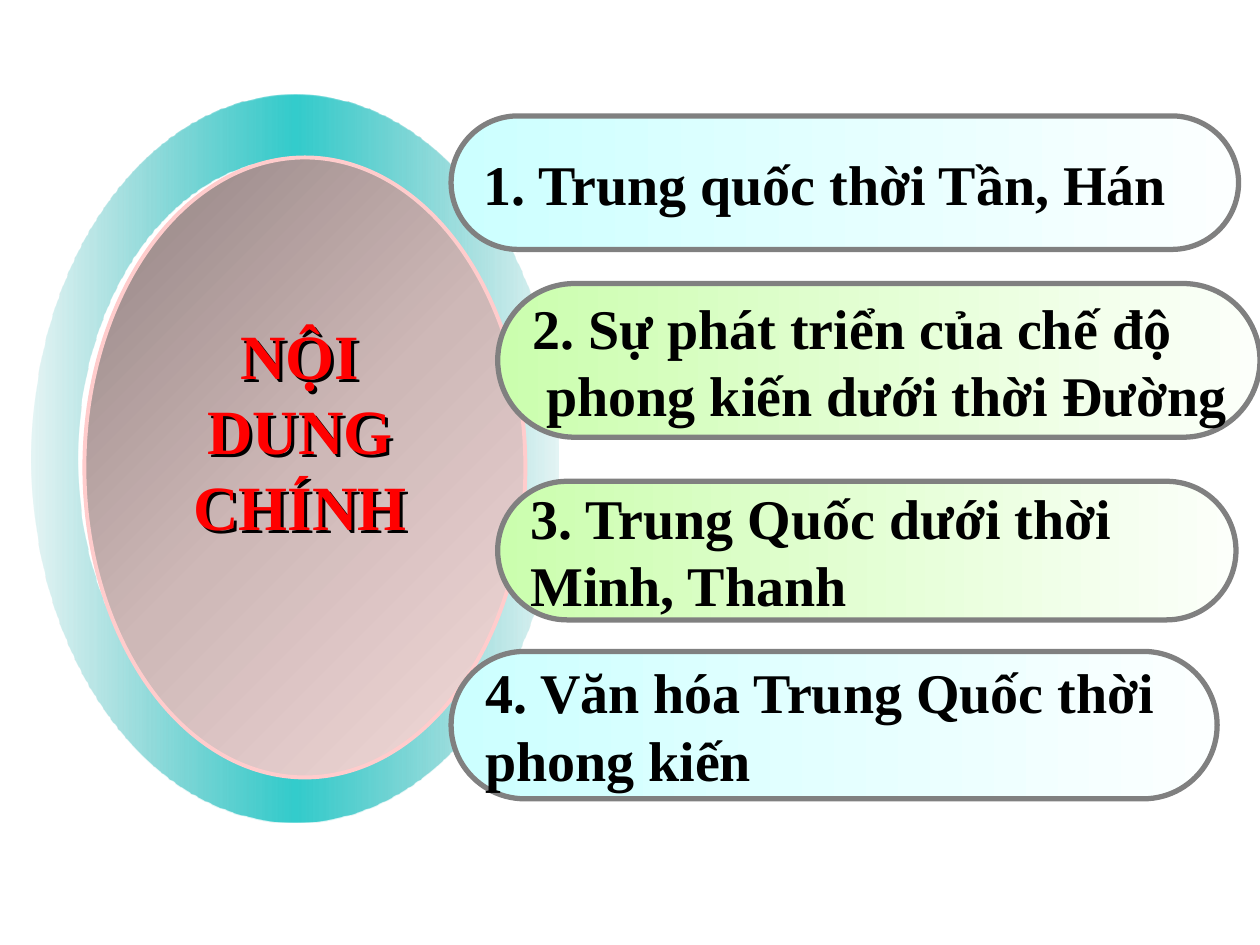
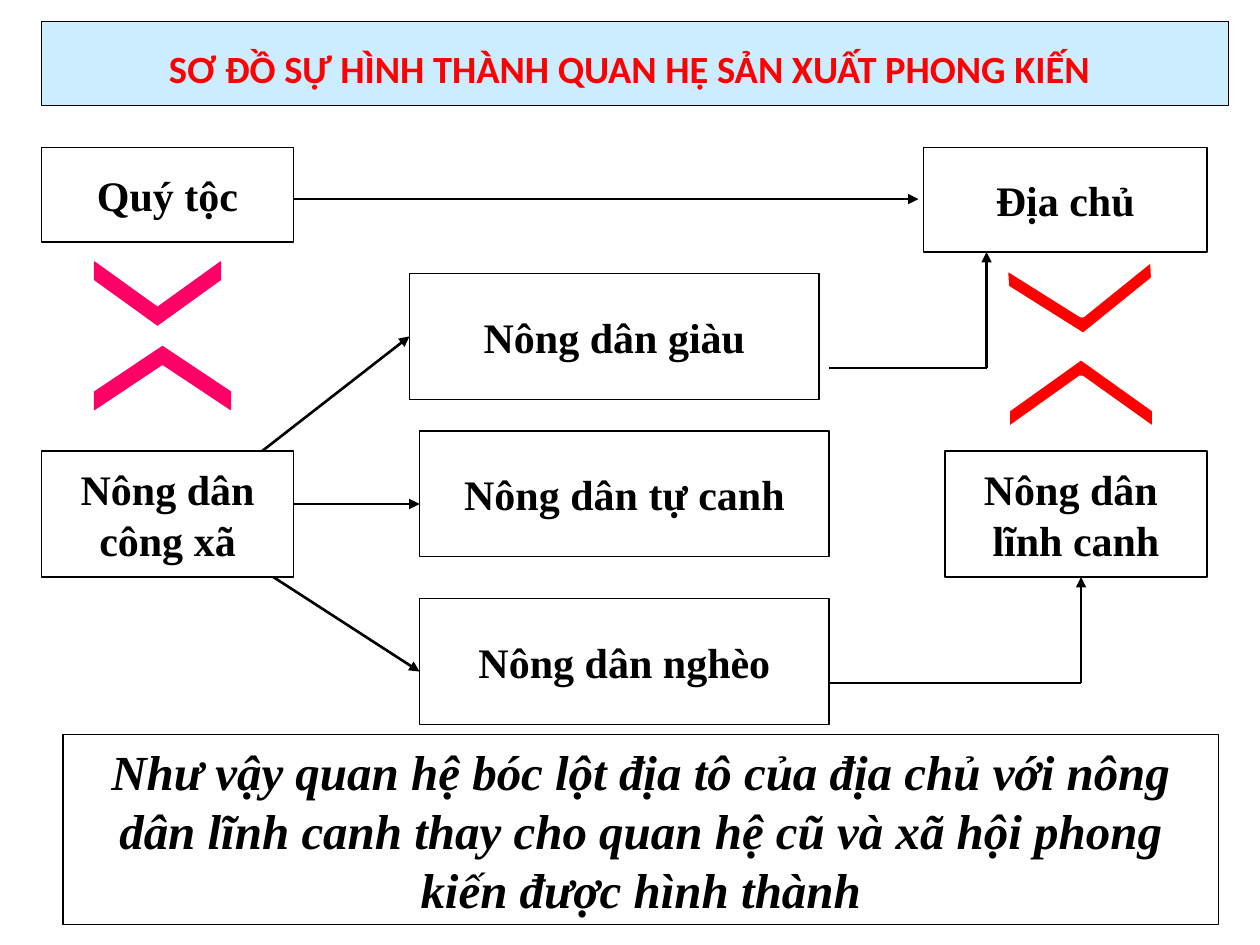
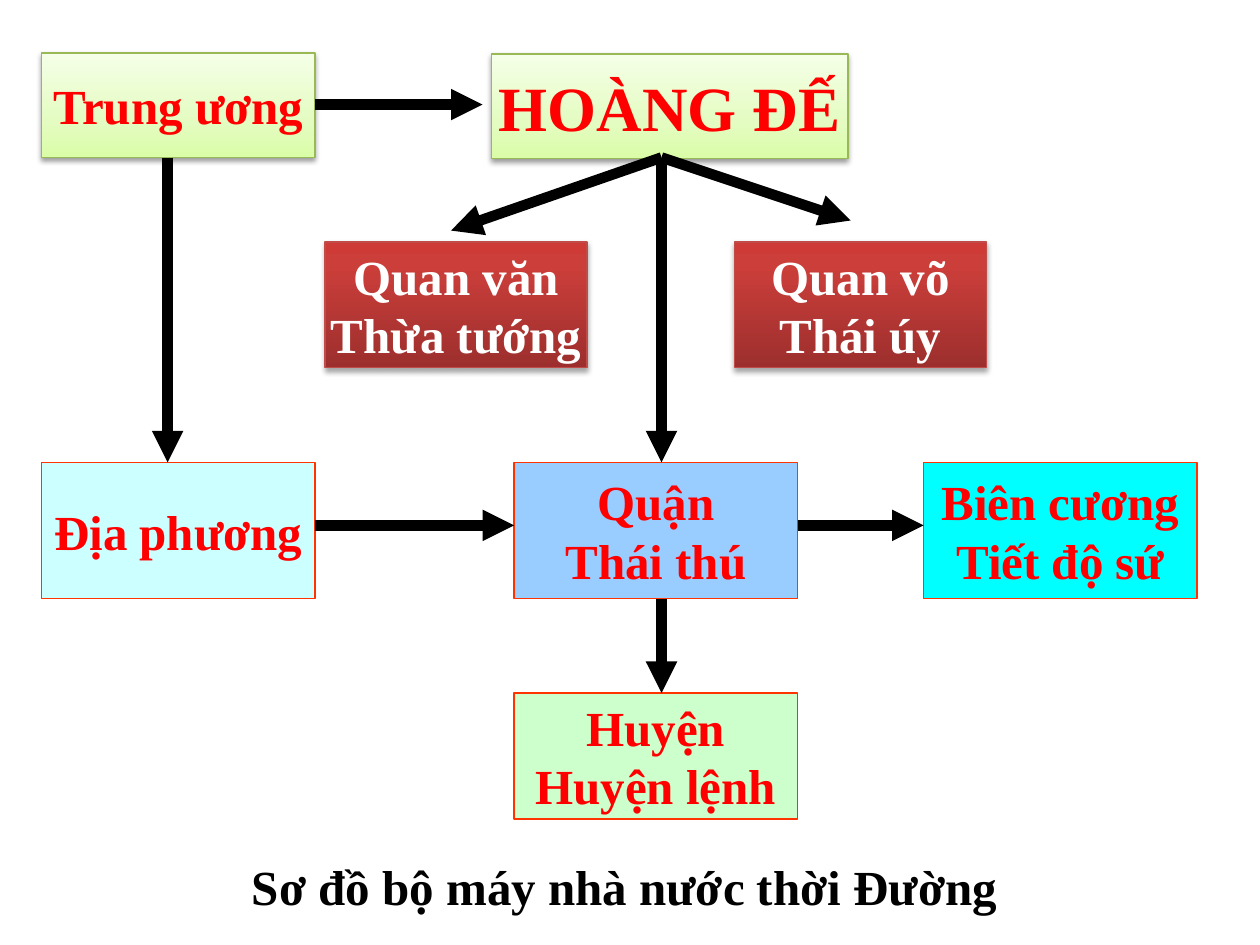
from itertools import pairwise

from pptx import Presentation
from pptx.dml.color import RGBColor
from pptx.enum.shapes import MSO_CONNECTOR, MSO_SHAPE
from pptx.enum.text import MSO_ANCHOR, MSO_AUTO_SIZE, PP_ALIGN
from pptx.oxml import parse_xml
from pptx.oxml.ns import nsdecls, qn
from pptx.util import Inches, Pt

RECT, ROUND_RECT = MSO_SHAPE.RECTANGLE, MSO_SHAPE.ROUNDED_RECTANGLE
ELLIPSE, CHEVRON = MSO_SHAPE.OVAL, MSO_SHAPE.CHEVRON
STRAIGHT = MSO_CONNECTOR.STRAIGHT
LEFT, CENTER = PP_ALIGN.LEFT, PP_ALIGN.CENTER
TOP, MIDDLE = MSO_ANCHOR.TOP, MSO_ANCHOR.MIDDLE
TITLE_ONLY = 5

COLORS = {
    "black": "000000", "white": "FFFFFF", "red": "FF0000", "pink": "FF0066",
    "blue": "3333FF", "gray": "808080", "rose": "FFCCCC", "heading": "CCECFF",
    "orange": "FF3300", "lime_edge": "98B955", "brick_edge": "BF4C48",
    "pale_cyan": "CCFFFF", "sky": "99CCFF", "cyan": "00FFFF", "mint": "CCFFCC",
}
# Gradients: direction, then stops of position, colour and opacity in percent
RIGHTWARD = '<a:lin ang="0" scaled="1"/>'
UPWARD = '<a:lin ang="16200000" scaled="0"/>'
FROM_CORNER = '<a:path path="circle"><a:fillToRect r="100000" b="100000"/></a:path>'
GRADIENTS = {
    "ring": (RIGHTWARD, [(0, "2BABAB", 12), (50, "33CCCC", 100), (100, "2BABAB", 12)]),
    "disc": (FROM_CORNER, [(0, "918181", 100), (50, "CEB8B7", 100), (100, "F4DADA", 100)]),
    "ice": (RIGHTWARD, [(0, "CCFFFF", 100), (100, "FCFFFF", 100)]),
    "leaf": (RIGHTWARD, [(0, "CBFEAE", 100), (100, "FCFFFA", 100)]),
    "lime": (UPWARD, [(0, "DAFDA7", 100), (35, "E4FCC2", 100), (100, "F5FFE7", 100)]),
    "brick": (UPWARD, [(0, "9C2F2D", 100), (80, "CB3E3A", 100), (100, "CE3B37", 100)]),
}
# Shadows: blur and distance in points, angle, opacity in percent
SHADOWS = {
    "lime": (3.1, 1.6, 90, 38),
    "brick": (3.1, 1.8, 90, 35),
    "letters": (0, 2.4, 45, 100),
}


def write(shape, text, size=24, color="black", font="Times New Roman",
          italic=False, align=CENTER, anchor=MIDDLE, wrap=False):
    frame = shape.text_frame
    frame.text = text
    frame.word_wrap = wrap
    frame.auto_size = MSO_AUTO_SIZE.NONE
    frame.vertical_anchor = anchor
    for paragraph in frame.paragraphs:
        paragraph.alignment = align
        for run in paragraph.runs:
            run.font.name = font
            run.font.size = Pt(size)
            run.font.bold = True
            run.font.italic = italic
            run.font.color.rgb = RGBColor.from_string(COLORS[color])


def paint(shape, fill=None, line=None, width=0.75, shadow=None):
    shape.shadow.inherit = False
    shape.fill.background()
    properties = shape.element.spPr
    if fill in GRADIENTS:
        direction, stops = GRADIENTS[fill]
        stop_xml = ""
        for position, color, opacity in stops:
            alpha = f'<a:alpha val="{opacity * 1000}"/>' if opacity < 100 else ""
            stop_xml += (f'<a:gs pos="{position * 1000}">'
                         f'<a:srgbClr val="{color}">{alpha}</a:srgbClr></a:gs>')
        gradient = parse_xml(
            f'<a:gradFill {nsdecls("a")} rotWithShape="1">'
            f'<a:gsLst>{stop_xml}</a:gsLst>{direction}</a:gradFill>')
        properties.replace(properties.find(qn("a:noFill")), gradient)
    elif fill:
        shape.fill.solid()
        shape.fill.fore_color.rgb = RGBColor.from_string(COLORS[fill])
    if line:
        shape.line.color.rgb = RGBColor.from_string(COLORS[line])
        shape.line.width = Pt(width)
    else:
        shape.line.fill.background()
    if shadow:
        blur, distance, angle, opacity = SHADOWS[shadow]
        properties.find(qn("a:effectLst")).append(parse_xml(
            f'<a:outerShdw {nsdecls("a")} blurRad="{Pt(blur)}" dist="{Pt(distance)}" '
            f'dir="{angle * 60000}" rotWithShape="0"><a:srgbClr val="000000">'
            f'<a:alpha val="{opacity * 1000}"/></a:srgbClr></a:outerShdw>'))


prs = Presentation()
prs.slide_width, prs.slide_height = Inches(10), Inches(7.5)
contents, relations, government = [
    prs.slides.add_slide(prs.slide_layouts[TITLE_ONLY]) for _ in range(3)]

# Titles
for slide, (left, top, width, height) in (
        (contents, (1.09, 2.46, 2.58, 2.46)),
        (relations, (0.33, 0.17, 9.42, 0.67)),
        (government, (0.33, 6.75, 9.25, 0.57))):
    title = slide.shapes.title
    title.left, title.top = Inches(left), Inches(top)
    title.width, title.height = Inches(width), Inches(height)

# Slide 1: ring of two ellipses, each made of four Bezier quarters
ring_left, ring_top, radius_x, radius_y = 0.25, 0.75, 2.09, 2.89
BEZIER = 0.5523
clockwise = [(-1, 0), (0, -1), (1, 0), (0, 1), (-1, 0)]
builder = contents.shapes.build_freeform(Inches(ring_left), Inches(ring_top + radius_y))
quarters = []
for rx, ry, corners in ((radius_x, radius_y, clockwise),
                        (1.72, 2.38, clockwise[::-1])):
    points = [(Inches(ring_left + radius_x + rx * x), Inches(ring_top + radius_y + ry * y))
              for x, y in corners]
    if rx != radius_x:
        builder.move_to(*points[0])
    builder.add_line_segments(points[1:], close=True)
    for (x1, y1), (x2, y2) in pairwise(corners):
        controls = ((x1 + BEZIER * x2, y1 + BEZIER * y2),
                    (x2 + BEZIER * x1, y2 + BEZIER * y1), (x2, y2))
        quarters.append("".join(
            f'<a:pt x="{Inches(radius_x + rx * x)}" y="{Inches(radius_y + ry * y)}"/>'
            for x, y in controls))
ring = builder.convert_to_shape()
for segment, quarter in zip(list(ring.element.iter(qn("a:lnTo"))), quarters):
    segment.getparent().replace(segment, parse_xml(
        f'<a:cubicBezTo {nsdecls("a")}>{quarter}</a:cubicBezTo>'))
paint(ring, "ring")

# Slide 1: disc
disc = contents.shapes.add_shape(
    ELLIPSE, Inches(0.67), Inches(1.25), Inches(3.5), Inches(4.92))
paint(disc, "disc", "rose", 2.25)

# Slide 1: topics
for text, fill, at in (
        ("1. Trung quốc thời Tần, Hán", "ice", (3.58, 0.92, 6.25, 1.06)),
        ("2. Sự phát triển của chế độ\n phong kiến dưới thời Đường", "leaf",
         (3.95, 2.25, 6.05, 1.22)),
        ("3. Trung Quốc dưới thời\nMinh, Thanh", "leaf", (3.95, 3.82, 5.86, 1.1)),
        ("4. Văn hóa Trung Quốc thời\nphong kiến", "ice", (3.58, 5.17, 6.08, 1.17))):
    topic = contents.shapes.add_shape(ROUND_RECT, *map(Inches, at))
    topic.adjustments[0] = 0.5
    paint(topic, fill, "gray", 3)
    write(topic, text, size=32, align=LEFT)

# Slide 1: title in front of the disc, with shadowed letters
contents_title = contents.shapes.title
paint(contents_title, shadow="letters")
write(contents_title, "NỘI DUNG CHÍNH", size=36, color="red", anchor=TOP, wrap=True)
contents.shapes.element.append(contents_title.element)

# Slide 2: heading, closed by a larger space
heading = relations.shapes.title
paint(heading, "heading", "black")
write(heading, "SƠ ĐỒ SỰ HÌNH THÀNH QUAN HỆ SẢN XUẤT PHONG KIẾN",
      size=22, color="red", font="Calibri")
closing_space = heading.text_frame.paragraphs[0].add_run()
closing_space.text = " "
closing_space.font.name = "Calibri"
closing_space.font.size = Pt(28)
closing_space.font.bold = True
closing_space.font.color.rgb = RGBColor.from_string(COLORS["blue"])

# Slide 2: social classes
for text, at in (
        ("Quý tộc", (0.33, 1.17, 2, 0.75)),
        ("Nông dân\ncông xã", (0.33, 3.58, 2, 1)),
        ("Địa chủ", (7.33, 1.17, 2.25, 0.83)),
        ("Nông dân \nlĩnh canh", (7.5, 3.58, 2.08, 1)),
        ("Nông dân giàu", (3.25, 2.17, 3.25, 1)),
        ("Nông dân tự canh", (3.33, 3.42, 3.25, 1)),
        ("Nông dân nghèo", (3.33, 4.75, 3.25, 1))):
    social_class = relations.shapes.add_shape(RECT, *map(Inches, at))
    paint(social_class, "white", "black")
    write(social_class, text)

# Slide 2: opposing chevrons
for at, rotation, fill, line, width in (
        ((1.04, 2.46, 0.5, 1.08), 270, "pink", "pink", 0.75),
        ((1, 1.83, 0.5, 1), 90, "pink", "pink", 0.75),
        ((8.29, 2.54, 0.58, 1.17), 270, "red", "white", 3),
        ((8.29, 1.79, 0.58, 1.17), 86.6, "red", "white", 3)):
    conflict = relations.shapes.add_shape(CHEVRON, *map(Inches, at))
    conflict.adjustments[0] = 0.72
    conflict.rotation = rotation
    paint(conflict, fill, line, width)

# Slide 2: conclusion
conclusion = relations.shapes.add_textbox(
    Inches(0.5), Inches(5.83), Inches(9.17), Inches(1.51))
paint(conclusion, line="black")
write(conclusion, "Như vậy quan hệ bóc lột địa tô của địa chủ với nông dân lĩnh canh "
      "thay cho quan hệ cũ và xã hội phong kiến được hình thành",
      size=28, italic=True, wrap=True)

# Slide 3: offices
for text, at, fill, line, color, size in (
        ("Trung ương", (0.33, 0.42, 2.17, 0.83), "lime", "lime_edge", "red", 28),
        ("HOÀNG ĐẾ", (3.9, 0.43, 2.83, 0.83), "lime", "lime_edge", "red", 36),
        ("Quan văn\nThừa tướng", (2.58, 1.92, 2.08, 1), "brick", "brick_edge", "white", 28),
        ("Quan võ\nThái úy", (5.83, 1.92, 2, 1), "brick", "brick_edge", "white", 28),
        ("Địa phương", (0.33, 3.67, 2.17, 1.08), "pale_cyan", "orange", "red", 28),
        ("Quận\nThái thú", (4.08, 3.67, 2.25, 1.08), "sky", "orange", "red", 28),
        ("Biên cương\nTiết độ sứ", (7.33, 3.67, 2.17, 1.08), "cyan", "orange", "red", 28),
        ("Huyện\nHuyện lệnh", (4.08, 5.5, 2.25, 1), "mint", "orange", "red", 28)):
    office = government.shapes.add_shape(RECT, *map(Inches, at))
    paint(office, fill, line, shadow=fill if fill in SHADOWS else None)
    write(office, text, size=size, color=color)

# Slide 3: caption
write(government.shapes.title, "Sơ đồ bộ máy nhà nước thời Đường",
      size=28, anchor=TOP, wrap=True)

# Links of both diagrams: start, end, arrowhead
class_links = [
    (2.33, 1.58, 7.29, 1.58, True), (2.08, 3.58, 3.25, 2.67, True),
    (2.33, 4, 3.33, 4, True), (2.17, 4.58, 3.33, 5.33, True),
    (6.58, 5.42, 8.58, 5.42, False), (8.58, 5.42, 8.58, 4.58, True),
    (6.58, 2.92, 7.83, 2.92, False), (7.83, 2.92, 7.83, 2, True),
]
office_links = [
    (2.5, 0.83, 3.83, 0.83, True), (1.33, 1.25, 1.33, 3.67, True),
    (5.25, 1.25, 5.25, 3.67, True), (5.25, 4.75, 5.25, 5.5, True),
    (2.5, 4.17, 4.08, 4.17, True), (5.25, 1.25, 6.75, 1.75, True),
    (5.25, 1.25, 3.58, 1.83, True), (6.33, 4.17, 7.33, 4.17, True),
]
for slide, links, width in ((relations, class_links, 1.5), (government, office_links, 6)):
    for *ends, has_arrow in links:
        link = slide.shapes.add_connector(STRAIGHT, *map(Inches, ends))
        link.line.color.rgb = RGBColor.from_string(COLORS["black"])
        link.line.width = Pt(width)
        if has_arrow:
            link.line._get_or_add_ln().append(
                parse_xml(f'<a:tailEnd {nsdecls("a")} type="triangle"/>'))
        link.element.spPr.append(parse_xml(f'<a:effectLst {nsdecls("a")}/>'))

prs.save("out.pptx")
